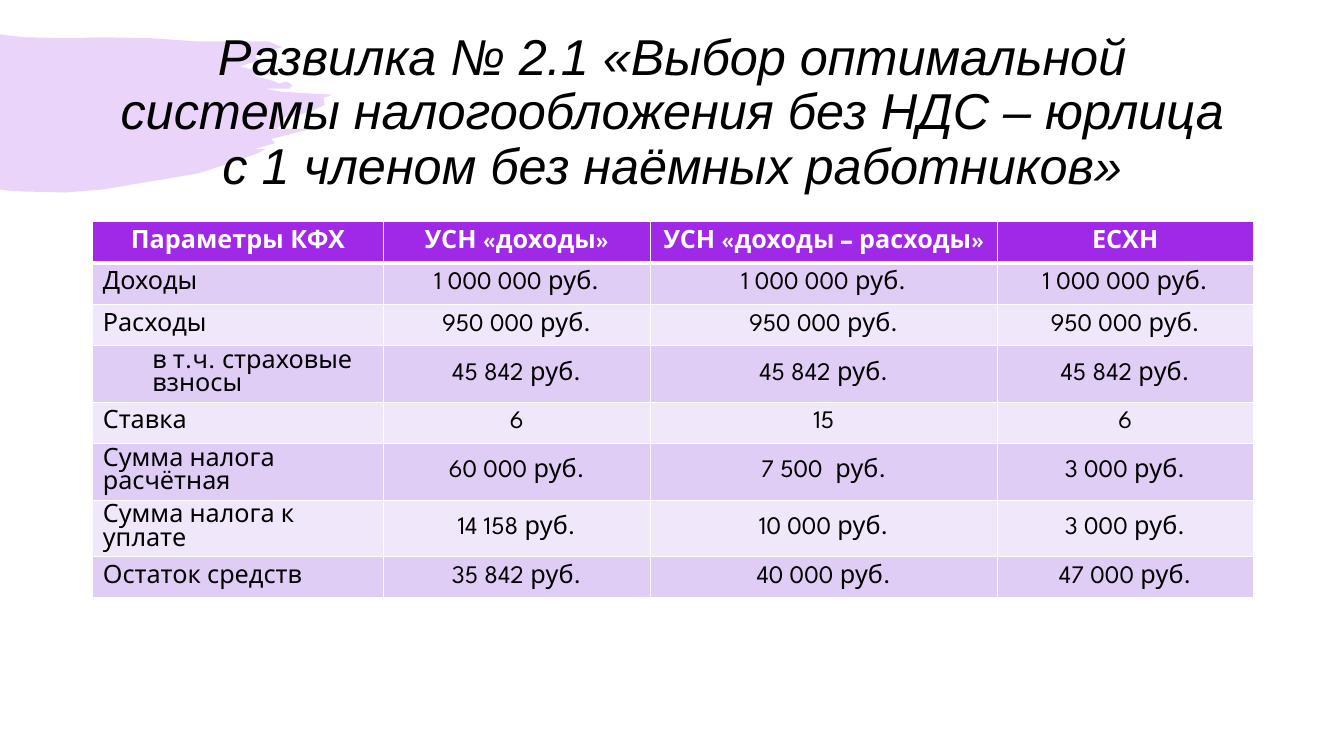
import dataclasses

import lxml.etree
import pptx
import pptx.dml.color
import pptx.enum.text
import pptx.oxml.ns
import pptx.util

PX = 9144  # EMU per px, 100 px to the inch
COLORS = {
    "accent": "9F29E7",
    "white": "FFFFFF",
    "black": "000000",
    "band_dark": "DFCDF6",
    "band_light": "F0E8FA",
}
TITLE_FONT = "Arial"
TABLE_FONT = "League Spartan"
TITLE = ("Развилка № 2.1 «Выбор оптимальной системы налогообложения без НДС – "
         "юрлица с 1 членом без наёмных работников»")
ALIGN = pptx.enum.text.PP_ALIGN
MIDDLE = pptx.enum.text.MSO_ANCHOR.MIDDLE

# Outline of the brush stroke, px
STROKE = [
    (0, 34), (6, 35), (25, 37), (66, 38), (102, 37), (151, 38), (194, 41),
    (248, 41), (266, 41), (280, 47), (271, 49), (255, 54), (253, 57), (256, 59),
    (262, 62), (250, 62), (238, 66), (246, 68), (256, 70), (266, 71), (275, 74),
    (263, 74), (251, 75), (263, 78), (273, 81), (276, 83), (280, 82), (284, 81),
    (288, 83), (290, 85), (287, 88), (284, 88), (263, 88), (279, 91), (296, 92),
    (330, 94), (321, 97), (322, 104), (318, 106), (307, 111), (300, 113),
    (283, 116), (280, 120), (278, 125), (274, 128), (308, 128), (269, 138),
    (273, 142), (252, 148), (263, 148), (256, 152), (231, 161), (197, 172),
    (102, 188), (65, 191), (23, 190), (7, 189), (0, 188),
]


@dataclasses.dataclass
class Row:
    label: str
    values: tuple[str, str, str]
    indent: int = 0


HEADER = Row("Параметры КФХ", ("УСН «доходы»", "УСН «доходы – расходы»", "ЕСХН"))
ROWS = [
    Row("Доходы", ("1 000 000 руб.",) * 3),
    Row("Расходы", ("950 000 руб.",) * 3),
    Row("в т.ч. страховые взносы", ("45 842 руб.",) * 3, indent=49),
    Row("Ставка", ("6", "15", "6")),
    Row("Сумма налога расчётная", ("60 000 руб.", "7 500  руб.", "3 000 руб.")),
    Row("Сумма налога к уплате", ("14 158 руб.", "10 000 руб.", "3 000 руб.")),
    Row("Остаток средств", ("35 842 руб.", "40 000 руб.", "47 000 руб.")),
]
COL_WIDTHS = [288, 265, 344, 254]
ROW_HEIGHT = 41


def px(n: int) -> pptx.util.Emu:
    return pptx.util.Emu(n * PX)


def rgb(name: str) -> pptx.dml.color.RGBColor:
    return pptx.dml.color.RGBColor.from_string(COLORS[name])


def format_run(r, font: str, size: int, color: str, bold: bool = False,
               italic: bool = False) -> None:
    r.font.name = font
    r.font.size = pptx.util.Pt(size)
    r.font.color.rgb = rgb(color)
    r.font.bold = bold
    r.font.italic = italic


def add_title(s) -> None:
    sp = s.shapes.title
    sp.left, sp.top, sp.width, sp.height = px(92), px(40), px(1150), px(145)
    tf = sp.text_frame
    tf.text = TITLE
    tf.word_wrap = True
    tf.auto_size = pptx.enum.text.MSO_AUTO_SIZE.NONE
    tf.vertical_anchor = MIDDLE
    p = tf.paragraphs[0]
    p.alignment = ALIGN.CENTER
    p.line_spacing = 0.9
    format_run(p.runs[0], TITLE_FONT, 36, "black", italic=True)


def add_stroke(s) -> None:
    fb = s.shapes.build_freeform(*STROKE[0], scale=PX)
    fb.add_line_segments(STROKE[1:], close=True)
    sp = fb.convert_to_shape()
    sp.shadow.inherit = False
    sp.line.fill.background()
    sp.fill.solid()
    sp.fill.fore_color.rgb = rgb("accent")
    color = sp.element.find(".//" + pptx.oxml.ns.qn("a:srgbClr"))
    lxml.etree.SubElement(color, pptx.oxml.ns.qn("a:alpha"), val="20000")
    s.shapes.title.element.addprevious(sp.element)  # behind the title


def set_borders(cell, top: int, bottom: int) -> None:
    qn = pptx.oxml.ns.qn
    tc_pr = cell._tc.get_or_add_tcPr()
    widths = {"a:lnL": 1, "a:lnR": 1, "a:lnT": top, "a:lnB": bottom}
    for i, (tag, width) in enumerate(widths.items()):
        ln = lxml.etree.Element(qn(tag), w=str(pptx.util.Pt(width)))
        fill = lxml.etree.SubElement(ln, qn("a:solidFill"))
        lxml.etree.SubElement(fill, qn("a:srgbClr"), val=COLORS["white"])
        tc_pr.insert(i, ln)


def fill_cell(cell, text: str, fill: str, header: bool, centered: bool,
              indent: int) -> None:
    cell.fill.solid()
    cell.fill.fore_color.rgb = rgb(fill)
    cell.vertical_anchor = MIDDLE
    p = cell.text_frame.paragraphs[0]
    p.text = text
    p.alignment = ALIGN.CENTER if centered else ALIGN.LEFT
    if indent:
        p_pr = p._p.get_or_add_pPr()
        p_pr.set("marL", str(px(indent)))
        p_pr.set("indent", "0")
    format_run(p.runs[0], TABLE_FONT, 18, "white" if header else "black", bold=header)


def add_tax_table(s) -> None:
    rows = [HEADER, *ROWS]
    table = s.shapes.add_table(len(rows), len(COL_WIDTHS), px(92), px(220),
                               px(sum(COL_WIDTHS)), px(ROW_HEIGHT * len(rows))).table
    for col, width in zip(table.columns, COL_WIDTHS):
        col.width = px(width)
    for i, row in enumerate(rows):
        table.rows[i].height = px(ROW_HEIGHT)
        header = i == 0
        fill = "accent" if header else ("band_light", "band_dark")[i % 2]
        for j, text in enumerate((row.label, *row.values)):
            cell = table.cell(i, j)
            fill_cell(cell, text, fill, header, centered=header or j > 0,
                      indent=row.indent if j == 0 else 0)
            set_borders(cell, top=3 if i == 1 else 1, bottom=3 if header else 1)


def main() -> None:
    prs = pptx.Presentation()
    prs.slide_width, prs.slide_height = px(1333), px(750)
    s = prs.slides.add_slide(prs.slide_layouts.get_by_name("Title Only"))
    add_title(s)
    add_stroke(s)
    add_tax_table(s)
    prs.save("out.pptx")


if __name__ == "__main__":
    main()
